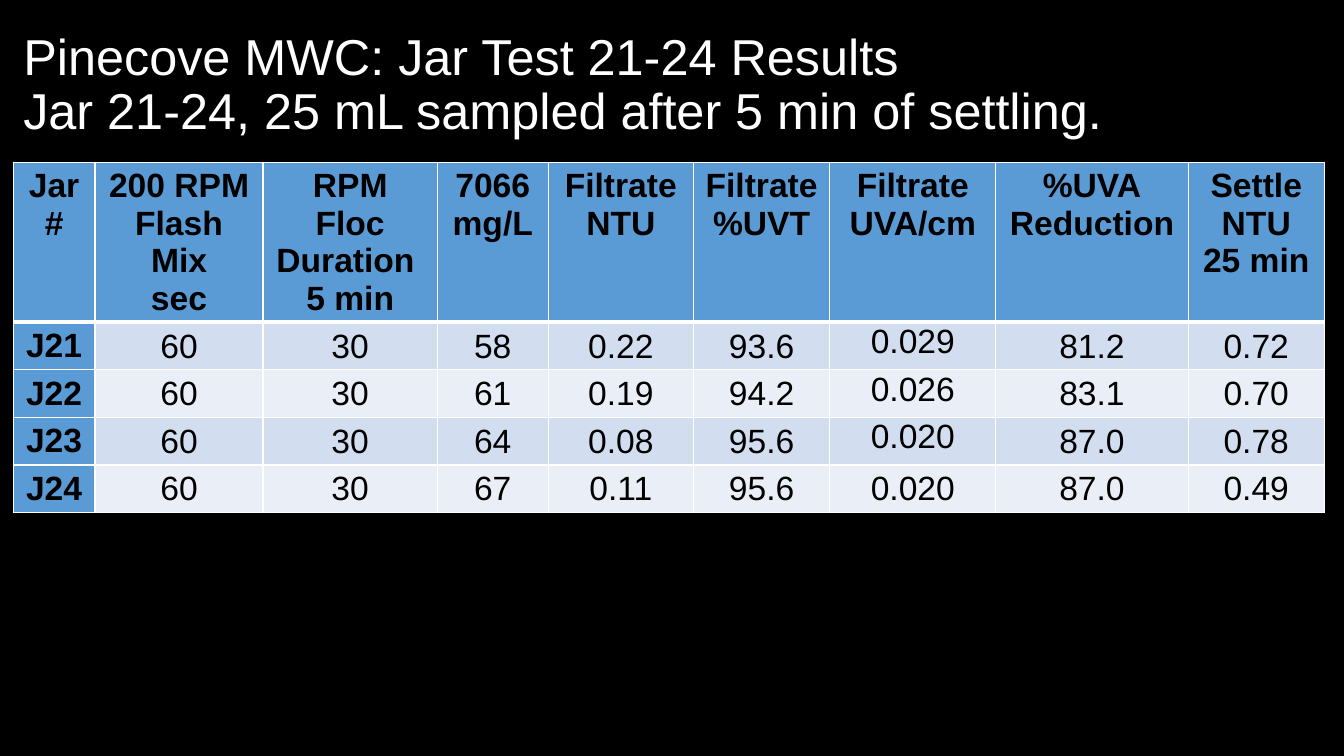
"""Builds the jar test results slide: a two-line title above a table of jars."""
from lxml.etree import SubElement
from pptx import Presentation
from pptx.dml.color import RGBColor
from pptx.enum.text import MSO_ANCHOR, MSO_AUTO_SIZE, PP_ALIGN
from pptx.oxml.ns import qn
from pptx.util import Pt

COLORS = {"background": "000000", "title": "FFFFFF", "text": "000000", "border": "FFFFFF",
          "header": "5B9BD5", "odd": "D2DEEF", "even": "EAEFF7"}
TITLE_LINES = ["Pinecove MWC: Jar Test 21-24 Results",
               "Jar 21-24, 25 mL sampled after 5 min of settling."]
ROWS = [
    ["Jar\n#", "200 RPM\nFlash\nMix\nsec", "RPM\nFloc\nDuration \n5 min", "7066\nmg/L",
     "Filtrate\nNTU", "Filtrate\n%UVT", "Filtrate\nUVA/cm", "%UVA\nReduction",
     "Settle\nNTU\n25 min"],
    ["J21", "60", "30", "58", "0.22", "93.6", "0.029", "81.2", "0.72"],
    ["J22", "60", "30", "61", "0.19", "94.2", "0.026", "83.1", "0.70"],
    ["J23", "60", "30", "64", "0.08", "95.6", "0.020", "87.0", "0.78"],
    ["J24", "60", "30", "67", "0.11", "95.6", "0.020", "87.0", "0.49"],
]
COLUMN_WIDTHS = [58.5, 120, 124.5, 79.2, 103.8, 97.4, 118.6, 137.4, 97.2]
ROW_HEIGHT = 29.5
UVA_COLUMN = 6
LAST_ROW = len(ROWS) - 1


def add_span(para, text, size, color, bold=False):
    span = para.add_run()
    span.text = text
    span.font.name = "Arial"
    span.font.size = Pt(size)
    span.font.bold = bold
    span.font.color.rgb = RGBColor.from_string(COLORS[color])


def add_border(cell, side, width):
    line = SubElement(cell._tc.get_or_add_tcPr(), qn(f"a:{side}"), w=str(Pt(width)))
    fill = SubElement(line, qn("a:solidFill"))
    SubElement(fill, qn("a:srgbClr"), val=COLORS["border"])


deck = Presentation()
deck.slide_width, deck.slide_height = Pt(960), Pt(540)
page = deck.slides.add_slide(deck.slide_layouts[5])
page.background.fill.solid()
page.background.fill.fore_color.rgb = RGBColor.from_string(COLORS["background"])

title = page.shapes.title
title.left, title.top, title.width, title.height = Pt(9.4), Pt(9.4), Pt(884), Pt(104.4)
title.text_frame.word_wrap = True
title.text_frame.auto_size = MSO_AUTO_SIZE.NONE
title.text_frame.vertical_anchor = MSO_ANCHOR.MIDDLE
para = title.text_frame.paragraphs[0]
para.alignment = PP_ALIGN.LEFT
para.line_spacing = 0.9
add_span(para, TITLE_LINES[0], 36, "title")
para.add_line_break()
add_span(para, TITLE_LINES[1], 36, "title")

frame = page.shapes.add_table(len(ROWS), len(COLUMN_WIDTHS), Pt(9.4), Pt(115.9),
                              Pt(sum(COLUMN_WIDTHS)), Pt(ROW_HEIGHT * len(ROWS)))
table = frame.table
table.first_col = True
for column, width in zip(table.columns, COLUMN_WIDTHS):
    column.width = Pt(width)

for row_index, values in enumerate(ROWS):
    table.rows[row_index].height = Pt(ROW_HEIGHT)
    for column_index, value in enumerate(values):
        cell = table.cell(row_index, column_index)
        is_header = row_index == 0 or column_index == 0
        add_border(cell, "lnL", 1)
        add_border(cell, "lnR", 1)
        add_border(cell, "lnT", 3 if row_index == 1 else 1)
        add_border(cell, "lnB", 3 if row_index == 0 else 1)
        band = "header" if is_header else "odd" if row_index % 2 else "even"
        cell.fill.solid()
        cell.fill.fore_color.rgb = RGBColor.from_string(COLORS[band])
        if not is_header:
            cell.margin_left = cell.margin_right = cell.margin_top = Pt(0.75)
            cell.margin_bottom = Pt(0)
            if column_index != UVA_COLUMN or row_index == LAST_ROW:
                cell.vertical_anchor = MSO_ANCHOR.MIDDLE
        for line_index, text in enumerate(value.split("\n")):
            text_frame = cell.text_frame
            para = text_frame.add_paragraph() if line_index else text_frame.paragraphs[0]
            para.alignment = PP_ALIGN.CENTER
            add_span(para, text, 24, "text", is_header)

deck.save("out.pptx")
